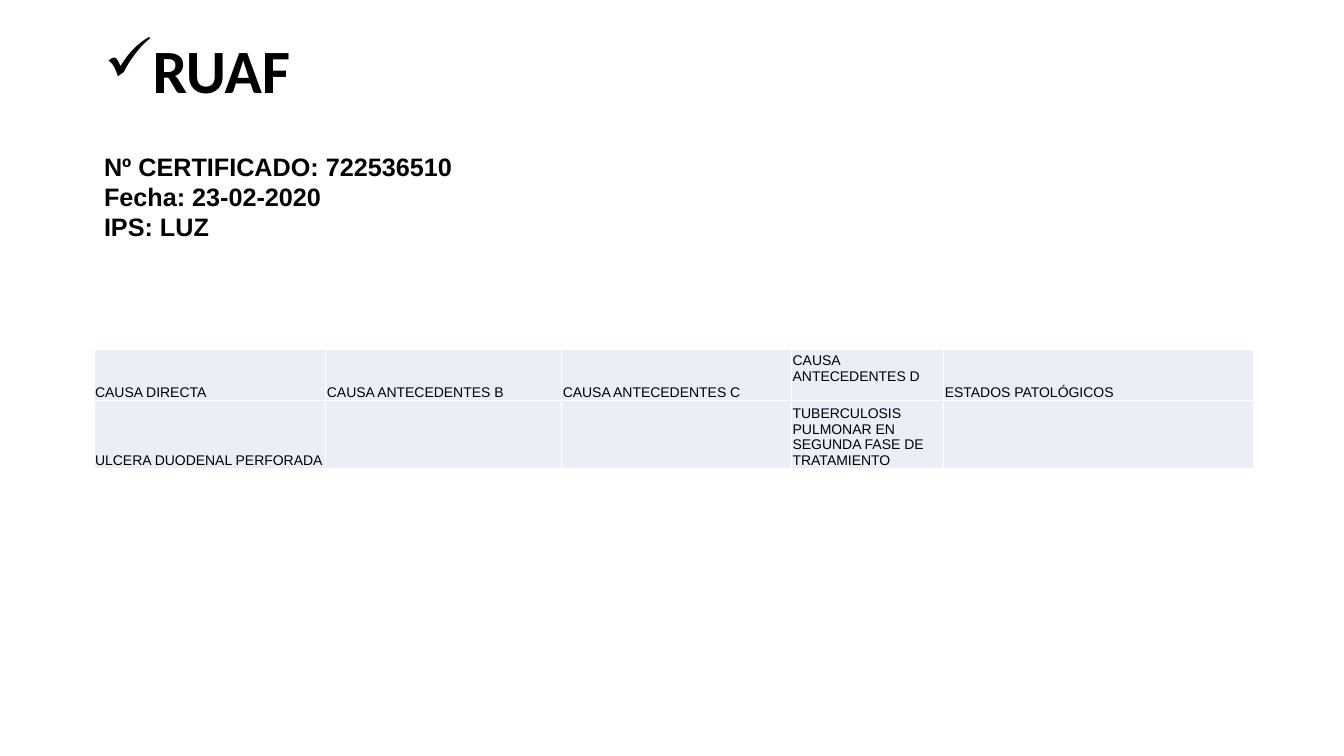
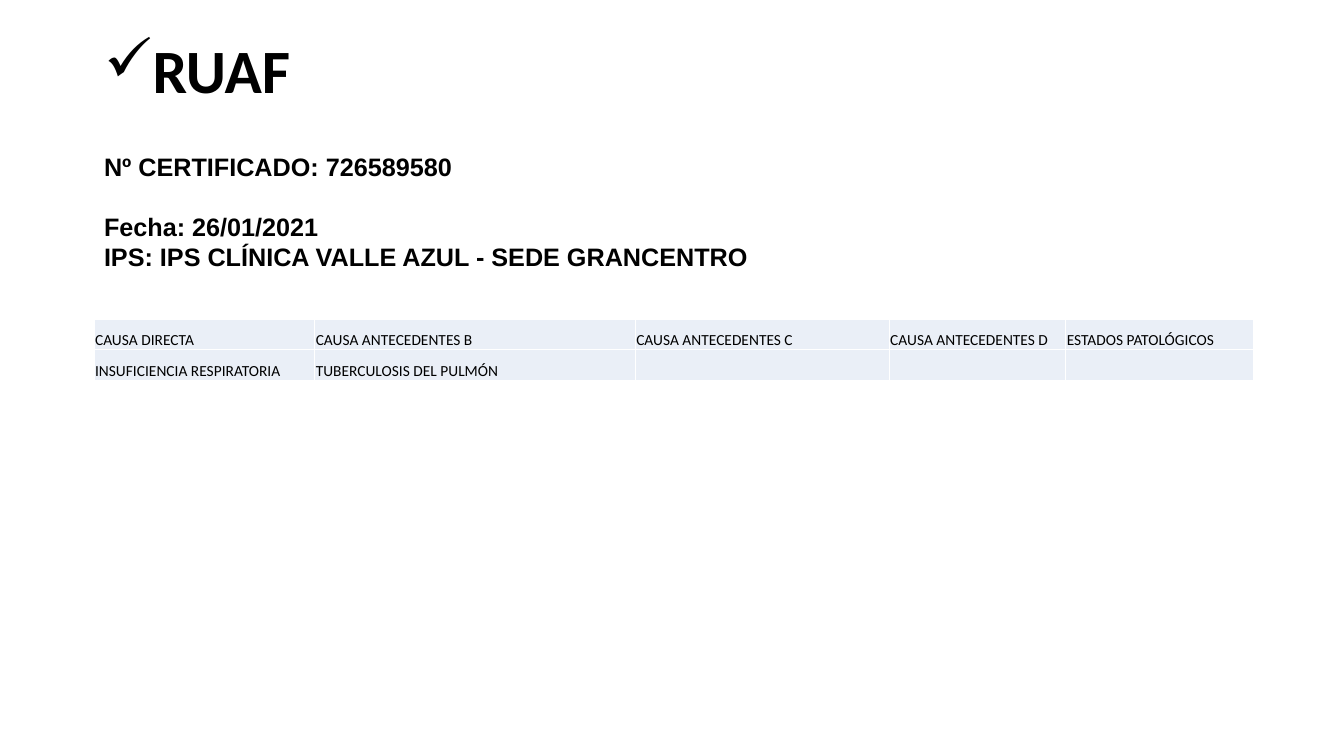
"""Build two slides that summarise death certificates from the RUAF registry."""
from dataclasses import dataclass

import pptx
import pptx.dml.color
import pptx.enum.text
import pptx.oxml
import pptx.oxml.ns
import pptx.util
from lxml import etree

BLACK = pptx.dml.color.RGBColor(0x00, 0x00, 0x00)
WHITE = pptx.dml.color.RGBColor(0xFF, 0xFF, 0xFF)
PALE_BLUE = pptx.dml.color.RGBColor(0xEA, 0xEF, 0xF7)

SLIDE_WIDTH = pptx.util.Inches(13.333)
SLIDE_HEIGHT = pptx.util.Inches(7.5)
TITLE_ONLY = 5

LEFT, CONTENT_WIDTH, DETAILS_WIDTH = 7, 86.25, 71.25
TITLE_HEIGHT = 19.33
LINE_HEIGHT = 4
CELL_INSET = pptx.util.Inches(0.01)
HEADINGS = (
    "CAUSA DIRECTA",
    "CAUSA ANTECEDENTES B",
    "CAUSA ANTECEDENTES C",
    "CAUSA ANTECEDENTES D",
    "ESTADOS PATOLÓGICOS",
)


@dataclass(frozen=True)
class DetailLine:
    text: str
    space_before: float = 0


@dataclass(frozen=True)
class Certificate:
    details: tuple[DetailLine, ...]
    causes: tuple[str, ...]
    table_top: float
    column_shares: tuple[float, ...]
    row_shares: tuple[float, ...]
    font: str
    size: float
    heading_lifts: tuple[float, ...] = (0, 0, 0, 0, 0)


CERTIFICATES = (
    Certificate(
        details=(
            DetailLine("Nº CERTIFICADO: 722536510"),
            DetailLine("Fecha: 23-02-2020"),
            DetailLine("IPS: LUZ"),
        ),
        causes=(
            "ULCERA DUODENAL PERFORADA",
            "",
            "",
            "TUBERCULOSIS PULMONAR EN SEGUNDA FASE DE TRATAMIENTO",
            "",
        ),
        table_top=46.2,
        column_shares=(20, 20.35, 19.83, 13.13, 26.69),
        row_shares=(6.75, 8.95),
        font="Arial",
        size=10,
        heading_lifts=(0, 0, 0, 0.16, 0),
    ),
    Certificate(
        details=(
            DetailLine("Nº CERTIFICADO: 726589580"),
            DetailLine("Fecha: 26/01/2021", space_before=21.5),
            DetailLine("IPS: IPS CLÍNICA VALLE AZUL - SEDE GRANCENTRO"),
        ),
        causes=("INSUFICIENCIA RESPIRATORIA", "TUBERCULOSIS DEL PULMÓN", "", "", ""),
        table_top=42.2,
        column_shares=(19.04, 27.65, 21.91, 15.23, 16.17),
        row_shares=(4.07, 4.07),
        font="Calibri",
        size=11,
    ),
)


def across(percent: float) -> int:
    """Return a percentage of the slide width."""
    return round(SLIDE_WIDTH * percent / 100)


def down(percent: float) -> int:
    """Return a percentage of the slide height."""
    return round(SLIDE_HEIGHT * percent / 100)


def write(paragraph, text: str, *, font: str, size: float, bold: bool = False,
          space_before: float = 0, line_spacing: float = 1.0) -> None:
    """Write one formatted run in a left-aligned paragraph."""
    paragraph.alignment = pptx.enum.text.PP_ALIGN.LEFT
    paragraph.space_before = pptx.util.Pt(space_before)
    paragraph.line_spacing = line_spacing
    run = paragraph.add_run()
    run.text = text
    run.font.name = font
    run.font.size = pptx.util.Pt(size)
    run.font.bold = bold
    run.font.color.rgb = BLACK


def add_check_title(slide, text: str) -> None:
    """Place the title with its check-mark bullet."""
    title = slide.shapes.title
    title.left, title.top = across(LEFT), 0
    title.width, title.height = across(CONTENT_WIDTH), down(TITLE_HEIGHT)
    title.text_frame.vertical_anchor = pptx.enum.text.MSO_ANCHOR.MIDDLE
    paragraph = title.text_frame.paragraphs[0]
    write(paragraph, text, font="Calibri", size=44, bold=True, line_spacing=0.9)
    properties = paragraph._p.get_or_add_pPr()
    indent = pptx.util.Inches(0.31)
    properties.set("marL", str(indent))
    properties.set("indent", str(-indent))
    bullet = etree.SubElement(properties, pptx.oxml.ns.qn("a:buChar"))
    bullet.set("char", "✓")


def add_details(slide, details: tuple[DetailLine, ...]) -> None:
    """Add the certificate's number, date and institution."""
    box = slide.shapes.add_textbox(
        across(LEFT), down(TITLE_HEIGHT), across(DETAILS_WIDTH),
        down(LINE_HEIGHT * len(details) + 1.4))
    frame = box.text_frame
    frame.word_wrap = True
    frame.auto_size = pptx.enum.text.MSO_AUTO_SIZE.SHAPE_TO_FIT_TEXT
    for position, line in enumerate(details):
        paragraph = frame.add_paragraph() if position else frame.paragraphs[0]
        write(paragraph, line.text, font="Arial", size=18, bold=True,
              space_before=line.space_before)


def style_cell(cell, lift: float) -> None:
    """Give a cell its white borders, pale fill, insets and anchor."""
    properties = cell._tc.get_or_add_tcPr()
    for side in ("lnL", "lnR", "lnT", "lnB"):
        border = etree.SubElement(properties, pptx.oxml.ns.qn(f"a:{side}"))
        border.set("w", str(pptx.util.Pt(1)))
        fill = etree.SubElement(border, pptx.oxml.ns.qn("a:solidFill"))
        color = etree.SubElement(fill, pptx.oxml.ns.qn("a:srgbClr"))
        color.set("val", str(WHITE))
    cell.fill.solid()
    cell.fill.fore_color.rgb = PALE_BLUE
    cell.margin_left = cell.margin_right = cell.margin_top = CELL_INSET
    cell.margin_bottom = pptx.util.Inches(lift)
    cell.vertical_anchor = pptx.enum.text.MSO_ANCHOR.BOTTOM


def add_causes(slide, certificate: Certificate) -> None:
    """Add the table of causes of death."""
    content = (HEADINGS, certificate.causes)
    lifts = (certificate.heading_lifts, (0,) * len(HEADINGS))
    table = slide.shapes.add_table(
        len(content), len(HEADINGS), across(LEFT), down(certificate.table_top),
        across(CONTENT_WIDTH), down(sum(certificate.row_shares))).table
    table.first_row = table.horz_banding = False
    for column, share in zip(table.columns, certificate.column_shares):
        column.width = across(CONTENT_WIDTH * share / 100)
    for row, share, texts, row_lifts in zip(
            table.rows, certificate.row_shares, content, lifts):
        row.height = down(share)
        for cell, text, lift in zip(row.cells, texts, row_lifts):
            style_cell(cell, lift)
            write(cell.text_frame.paragraphs[0], text,
                  font=certificate.font, size=certificate.size)


def main() -> None:
    """Build and save the presentation."""
    presentation = pptx.Presentation()
    presentation.slide_width = SLIDE_WIDTH
    presentation.slide_height = SLIDE_HEIGHT
    for certificate in CERTIFICATES:
        slide = presentation.slides.add_slide(presentation.slide_layouts[TITLE_ONLY])
        add_check_title(slide, "RUAF")
        add_details(slide, certificate.details)
        add_causes(slide, certificate)
    presentation.save("out.pptx")


if __name__ == "__main__":
    main()
